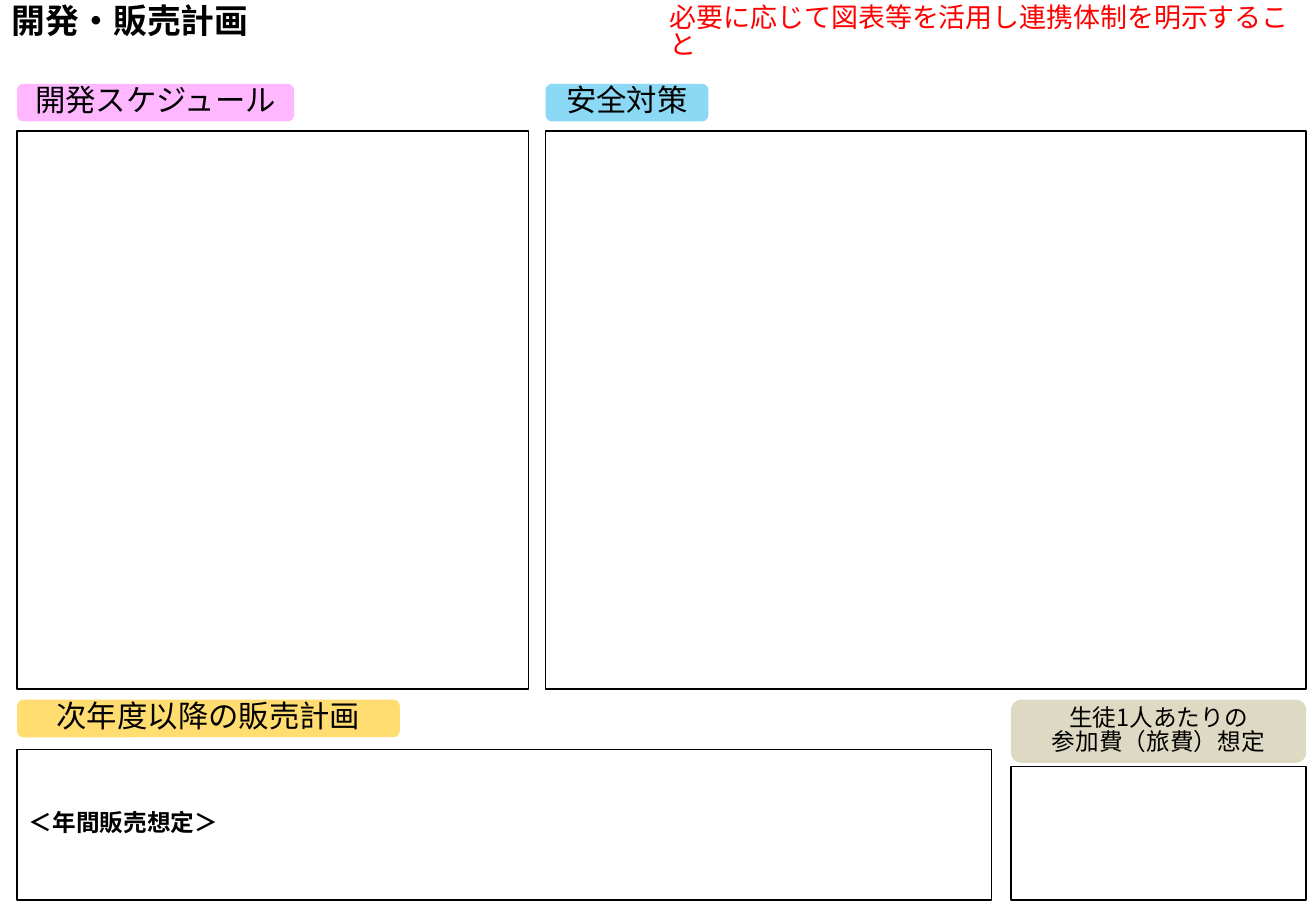
"""Build the development and sales plan slide with its framed sections."""
import pptx
import pptx.dml.color
import pptx.enum.shapes
import pptx.enum.text
import pptx.oxml
import pptx.oxml.ns
import pptx.util

FONT = "Noto Sans CJK JP"
Inches = pptx.util.Inches
Shape = pptx.enum.shapes.MSO_SHAPE
Align = pptx.enum.text.PP_ALIGN
Anchor = pptx.enum.text.MSO_ANCHOR

WIDTH, HEIGHT = 10.83, 7.5
LEFT, RIGHT = 0.14, 10.75
MIDDLE, COST = 4.49, 8.32
GAP = 0.14
UPPER_BADGE, UPPER_FRAME = 0.69, 1.08
LOWER_BADGE, LOWER_FRAME, COST_FRAME = 5.76, 6.17, 6.31
UPPER_END, LOWER_END = 5.67, 7.41
BADGE_HEIGHT = 0.31


def color(code):
    return pptx.dml.color.RGBColor.from_string(code)


def write(box, lines, size, ink="000000", bold=False, align=Align.LEFT, anchor=Anchor.MIDDLE):
    frame = box.text_frame
    frame.word_wrap = True
    frame.vertical_anchor = anchor
    for index, line in enumerate(lines):
        para = frame.add_paragraph() if index else frame.paragraphs[0]
        para.alignment = align
        para.line_spacing = 0.84
        span = para.add_run()
        span.text = line
        span.font.name = FONT
        span.font.size = pptx.util.Pt(size)
        span.font.bold = bold
        span.font.color.rgb = color(ink)
        east_asian = pptx.oxml.parse_xml(
            f'<a:ea {pptx.oxml.ns.nsdecls("a")} typeface="{FONT}"/>')
        span.font._element.find(pptx.oxml.ns.qn("a:latin")).addnext(east_asian)


deck = pptx.Presentation()
deck.slide_width, deck.slide_height = Inches(WIDTH), Inches(HEIGHT)
page = deck.slides.add_slide(deck.slide_layouts[6])

headings = [
    (0, 9.75, 0.44, "開発・販売計画", 20, "000000", True),
    (WIDTH / 2, WIDTH / 2, 0.37, "必要に応じて図表等を活用し連携体制を明示すること", 16, "FF0000", False),
]
for left, width, height, text, size, ink, bold in headings:
    box = page.shapes.add_textbox(Inches(left), 0, Inches(width), Inches(height))
    write(box, [text], size, ink, bold, anchor=Anchor.TOP)

frames = [
    (LEFT, UPPER_FRAME, MIDDLE - GAP, UPPER_END, []),
    (MIDDLE, UPPER_FRAME, RIGHT, UPPER_END, []),
    (LEFT, LOWER_FRAME, COST - 0.16, LOWER_END, ["＜年間販売想定＞"]),
    (COST, COST_FRAME, RIGHT, LOWER_END, []),
]
for left, top, right, bottom, lines in frames:
    box = page.shapes.add_shape(
        Shape.RECTANGLE, Inches(left), Inches(top), Inches(right - left), Inches(bottom - top))
    box.shadow.inherit = False
    box.fill.background()
    box.line.color.rgb = color("000000")
    box.line.width = pptx.util.Pt(1)
    write(box, lines, 14, bold=True)

badges = [
    (LEFT, UPPER_BADGE, 2.28, BADGE_HEIGHT, "FFB7FF", ["開発スケジュール"], 18),
    (MIDDLE, UPPER_BADGE, 1.34, BADGE_HEIGHT, "8BD9F5", ["安全対策"], 18),
    (LEFT, LOWER_BADGE, 3.15, BADGE_HEIGHT, "FFDD71", ["次年度以降の販売計画"], 18),
    (COST, LOWER_BADGE, RIGHT - COST, 0.52, "DDD9C3", ["生徒1人あたりの", "参加費（旅費）想定"], 14),
]
for left, top, width, height, fill, lines, size in badges:
    box = page.shapes.add_shape(
        Shape.ROUNDED_RECTANGLE, Inches(left), Inches(top), Inches(width), Inches(height))
    box.shadow.inherit = False
    box.fill.solid()
    box.fill.fore_color.rgb = color(fill)
    box.line.fill.background()
    write(box, lines, size, align=Align.CENTER)

deck.save("out.pptx")
